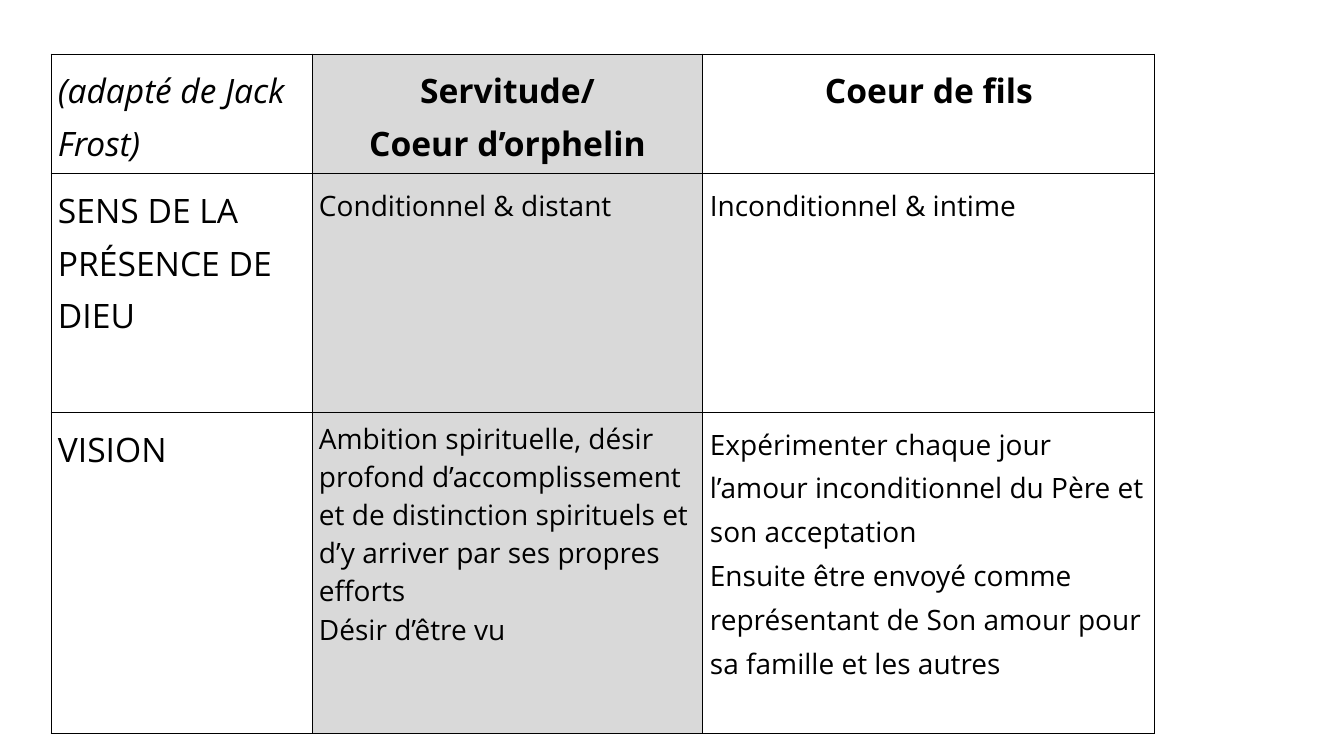
from dataclasses import dataclass

from lxml import etree
from pptx import Presentation
from pptx.dml.color import RGBColor
from pptx.enum.text import PP_ALIGN
from pptx.oxml.ns import qn
from pptx.table import _Cell
from pptx.util import Emu, Pt

EMU_PER_PX = 914400 / 100.8
BLACK = RGBColor(0x00, 0x00, 0x00)
GREY = RGBColor(0xD9, 0xD9, 0xD9)
LEFT, CENTER = PP_ALIGN.LEFT, PP_ALIGN.CENTER

SLIDE_SIZE = (1344, 756)
TABLE_LEFT, TABLE_TOP = 51, 54
COLUMN_WIDTHS = (261, 391, 452)
ROW_HEIGHTS = (119, 239, 321)
CELL_MARGIN = 7
BORDER_WIDTH = Pt(0.75)
ORPHAN_COLUMN = 1


@dataclass(frozen=True)
class Entry:
    paragraphs: tuple[str, ...]
    size: int = 20
    bold: bool = False
    italic: bool = False
    align: PP_ALIGN = LEFT
    line_spacing: float = 1.15


def heading(*paragraphs: str) -> Entry:
    return Entry(paragraphs, size=24, bold=True, align=CENTER)


def topic(text: str, italic: bool = False) -> Entry:
    return Entry((text,), size=24, italic=italic)


COMPARISON = (
    (
        topic("(adapté de Jack Frost)", italic=True),
        heading("Servitude/", "Coeur d’orphelin"),
        heading("Coeur de fils"),
    ),
    (
        topic("SENS DE LA PRÉSENCE DE DIEU"),
        Entry(("Conditionnel & distant",)),
        Entry(("Inconditionnel & intime",)),
    ),
    (
        topic("VISION"),
        Entry(
            (
                "Ambition spirituelle, désir profond d’accomplissement et de "
                "distinction spirituels et d’y arriver par ses propres efforts",
                "Désir d’être vu",
            ),
            line_spacing=1.0,
        ),
        Entry(
            (
                "Expérimenter chaque jour l’amour inconditionnel du Père "
                "et son acceptation",
                "Ensuite être envoyé comme représentant de Son amour pour "
                "sa famille et les autres",
            )
        ),
    ),
)


def px(length: int) -> Emu:
    return Emu(round(length * EMU_PER_PX))


def add_borders(cell: _Cell) -> None:
    properties = cell._tc.get_or_add_tcPr()
    for side in ("a:lnL", "a:lnR", "a:lnT", "a:lnB"):
        border = etree.SubElement(properties, qn(side), w=str(int(BORDER_WIDTH)))
        fill = etree.SubElement(border, qn("a:solidFill"))
        etree.SubElement(fill, qn("a:srgbClr"), val=str(BLACK))


def write_entry(cell: _Cell, entry: Entry) -> None:
    for side in ("left", "right", "top", "bottom"):
        setattr(cell, f"margin_{side}", px(CELL_MARGIN))
    font_format = {
        "name": "Open Sans",
        "size": Pt(entry.size),
        "bold": entry.bold,
        "italic": entry.italic,
    }
    frame = cell.text_frame
    for index, text in enumerate(entry.paragraphs):
        paragraph = frame.add_paragraph() if index else frame.paragraphs[0]
        paragraph.alignment = entry.align
        paragraph.line_spacing = entry.line_spacing
        run = paragraph.add_run()
        run.text = text
        for attribute, value in font_format.items():
            setattr(run.font, attribute, value)
        run.font.color.rgb = BLACK


def main() -> None:
    presentation = Presentation()
    presentation.slide_width, presentation.slide_height = map(px, SLIDE_SIZE)
    slide = presentation.slides.add_slide(presentation.slide_layouts[6])
    table = slide.shapes.add_table(
        len(ROW_HEIGHTS),
        len(COLUMN_WIDTHS),
        px(TABLE_LEFT),
        px(TABLE_TOP),
        px(sum(COLUMN_WIDTHS)),
        px(sum(ROW_HEIGHTS)),
    ).table
    table.first_row = False
    table.horz_banding = False
    for column, width in zip(table.columns, COLUMN_WIDTHS):
        column.width = px(width)
    for row, height in zip(table.rows, ROW_HEIGHTS):
        row.height = px(height)

    for row, entries in zip(table.rows, COMPARISON):
        for column_index, (cell, entry) in enumerate(zip(row.cells, entries)):
            write_entry(cell, entry)
            add_borders(cell)
            if column_index == ORPHAN_COLUMN:
                cell.fill.solid()
                cell.fill.fore_color.rgb = GREY
            else:
                cell.fill.background()
    presentation.save("out.pptx")


if __name__ == "__main__":
    main()
